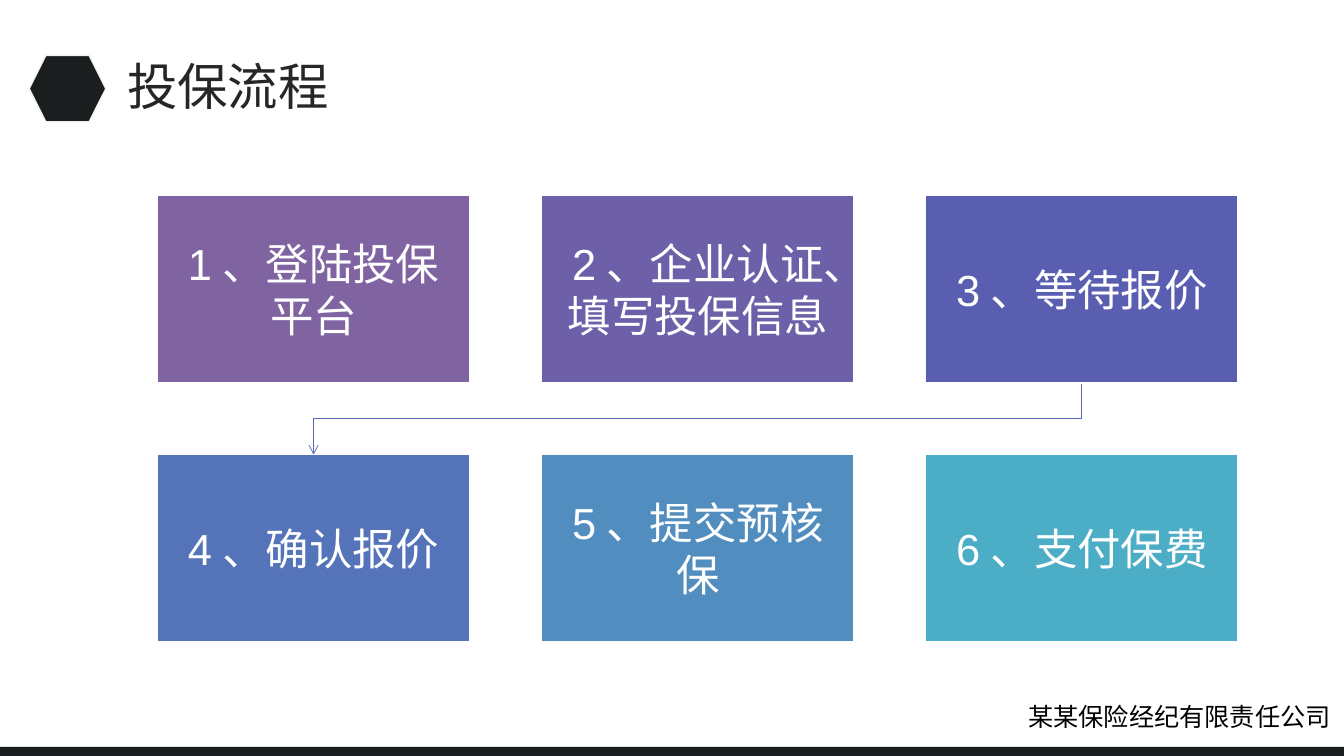
from pptx import Presentation
from pptx.dml.color import RGBColor
from pptx.enum.shapes import MSO_SHAPE
from pptx.enum.text import MSO_ANCHOR, PP_ALIGN
from pptx.oxml.ns import qn
from pptx.util import Inches, Pt
from lxml.etree import SubElement

HUES = {
    "dark": "1B1E1F", "edge": "F2F2F2", "title": "262626",
    "black": "000000", "white": "FFFFFF", "route": "5868B4",
    "login": "8064A2", "verify": "6E5FA9", "quote": "5A5EB1",
    "accept": "5573B8", "review": "518DBF", "pay": "4CADC6",
}
STEPS = [
    ("1、登陆投保平台", "login"),
    ("2、企业认证、填写投保信息", "verify"),
    ("3、等待报价", "quote"),
    ("4、确认报价", "accept"),
    ("5、提交预核保", "review"),
    ("6、支付保费", "pay"),
]
LEFT, TOP = 1.56, 1.94
WIDE, HIGH = 3.1, 1.86
GAP = 0.71
COLS = 3


class Deck:
    def __init__(self, font):
        self.font = font
        self.file = Presentation()
        self.file.slide_width = Inches(13.33)
        self.file.slide_height = Inches(7.5)
        self.slide = self.file.slides.add_slide(self.file.slide_layouts[5])

    def hue(self, name):
        return RGBColor.from_string(HUES[name])

    def words(self, frame, text, size, hue, align=PP_ALIGN.LEFT):
        frame.word_wrap = True
        frame.text = text
        par = frame.paragraphs[0]
        par.alignment = align
        par.font.name = self.font
        par.font.size = Pt(size)
        par.font.color.rgb = self.hue(hue)
        return par

    def title(self, text, x, y, w, h):
        head = self.slide.shapes.title
        head.left, head.top = Inches(x), Inches(y)
        head.width, head.height = Inches(w), Inches(h)
        head.text_frame.vertical_anchor = MSO_ANCHOR.MIDDLE
        self.words(head.text_frame, text, 36, "title").line_spacing = 0.9

    def shape(self, kind, x, y, w, h, fill, line=None):
        item = self.slide.shapes.add_shape(
            kind, Inches(x), Inches(y), Inches(w), Inches(h))
        item.shadow.inherit = False
        item.fill.solid()
        item.fill.fore_color.rgb = self.hue(fill)
        if line:
            item.line.color.rgb = self.hue(line)
            item.line.width = Pt(1)
        else:
            item.line.fill.background()
        return item

    def step(self, text, x, y, fill):
        card = self.shape(MSO_SHAPE.RECTANGLE, x, y, WIDE, HIGH, fill, "white")
        frame = card.text_frame
        frame.margin_left = frame.margin_right = Inches(0.24)
        frame.margin_top = frame.margin_bottom = Inches(0.24)
        frame.vertical_anchor = MSO_ANCHOR.MIDDLE
        self.words(frame, text, 31, "white", PP_ALIGN.CENTER)

    def label(self, text, x, y, w, h):
        box = self.slide.shapes.add_textbox(
            Inches(x), Inches(y), Inches(w), Inches(h))
        self.words(box.text_frame, text, 18, "black")

    def route(self, points, hue):
        spots = [(Inches(x), Inches(y)) for x, y in points]
        pen = self.slide.shapes.build_freeform(*spots[0])
        pen.add_line_segments(spots[1:], close=False)
        item = pen.convert_to_shape()
        item.shadow.inherit = False
        item.fill.background()
        item.line.color.rgb = self.hue(hue)
        item.line.width = Pt(0.5)
        SubElement(item.element.spPr.find(qn("a:ln")), qn("a:tailEnd"), type="arrow")


def main():
    deck = Deck("Arial")
    deck.shape(MSO_SHAPE.RECTANGLE, 0, 7.41, 13.33, 0.1, "dark")
    deck.shape(MSO_SHAPE.HEXAGON, 0.29, 0.55, 0.76, 0.66, "dark", "edge")
    deck.label("某某保险经纪有限责任公司", 10.1, 6.91, 3.84, 0.4)
    deck.title("投保流程", 1.16, 0.55, 11.5, 0.66)

    start = LEFT + (COLS - 1) * (WIDE + GAP) + WIDE / 2
    end = LEFT + WIDE / 2
    base = TOP + HIGH
    turn = base + GAP / 2
    deck.route([(start, base), (start, turn), (end, turn), (end, base + GAP)],
               "route")

    for i, (text, fill) in enumerate(STEPS):
        row, col = divmod(i, COLS)
        deck.step(text, LEFT + col * (WIDE + GAP), TOP + row * (HIGH + GAP), fill)

    deck.file.save("out.pptx")


if __name__ == "__main__":
    main()
